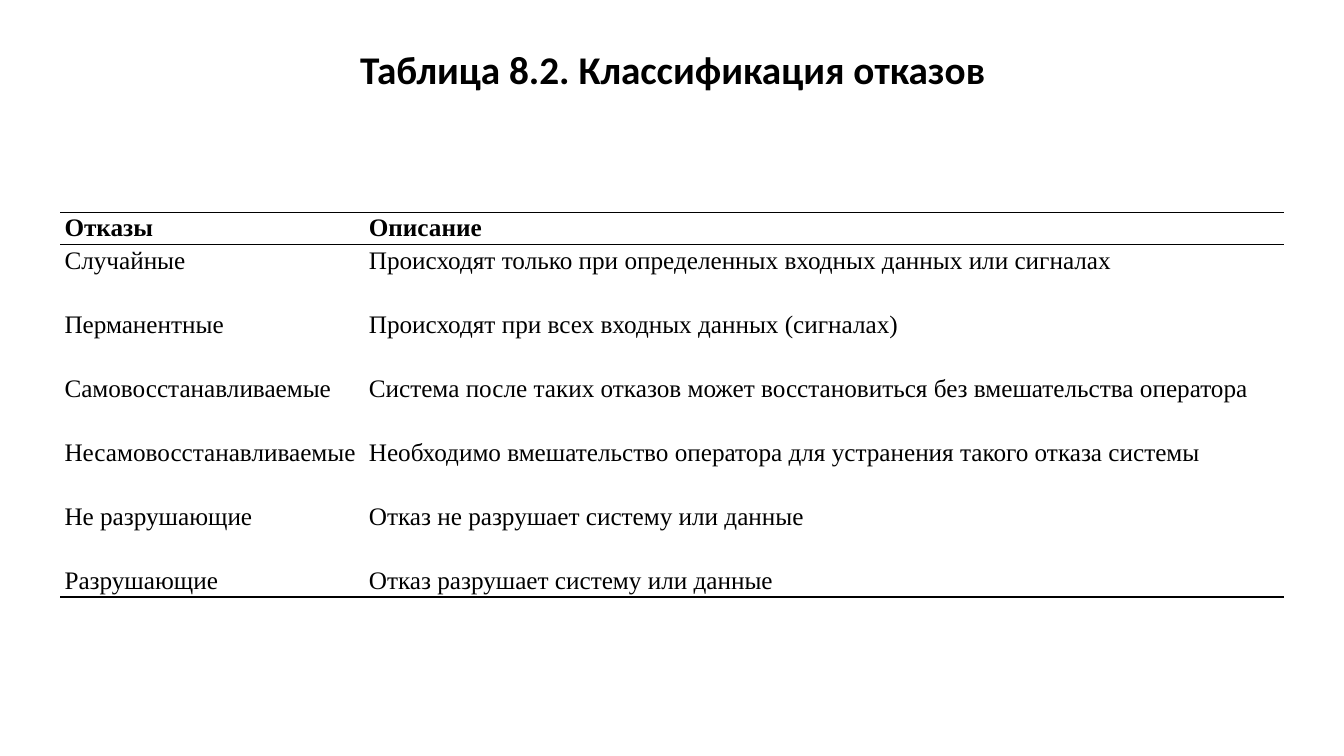
from lxml import etree
from pptx import Presentation
from pptx import util as u
from pptx.dml.color import RGBColor
from pptx.enum import text
from pptx.oxml import ns

PAGE_WIDTH, PAGE_HEIGHT = u.Inches(13.33), u.Inches(7.5)
BLACK, WHITE = "000000", "FFFFFF"
LINE_UNIT = u.Inches(3.81 / 12)
COLUMN_SHARES = (0.2265, 0.6842)
HEADINGS = ("Отказы", "Описание")
FAILURES = (
    ("Случайные", "Происходят только при определенных входных данных или сигналах"),
    ("Перманентные", "Происходят при всех входных данных (сигналах)"),
    ("Самовосстанавливаемые",
     "Система после таких отказов может восстановиться без вмешательства оператора"),
    ("Несамовосстанавливаемые",
     "Необходимо вмешательство оператора для устранения такого отказа системы"),
    ("Не разрушающие", "Отказ не разрушает систему или данные"),
    ("Разрушающие", "Отказ разрушает систему или данные"),
)


def color(value):
    return RGBColor.from_string(value)


def across(share):
    return round(PAGE_WIDTH * share)


def down(share):
    return round(PAGE_HEIGHT * share)


def write(frame, words, font, size, bold=False, align=None, spacing=1.0):
    para = frame.paragraphs[0]
    para.alignment = align
    para.line_spacing = spacing
    span = para.add_run()
    span.text = words
    span.font.name = font
    span.font.size = u.Pt(size)
    span.font.bold = bold
    span.font.color.rgb = color(BLACK)


def add_title(page, words):
    box = page.shapes.add_textbox(across(0.069), down(0.06), across(0.863), down(0.073))
    box.text_frame.word_wrap = True
    write(box.text_frame, words, "Calibri", 28, bold=True,
          align=text.PP_ALIGN.CENTER, spacing=0.9)


def set_borders(cell, ruled):
    properties = cell._tc.get_or_add_tcPr()
    for side in "LRTB":
        line = etree.SubElement(properties, ns.qn(f"a:ln{side}"), w=str(u.Pt(1)))
        if side in ruled:
            fill = etree.SubElement(line, ns.qn("a:solidFill"))
            etree.SubElement(fill, ns.qn("a:srgbClr"), val=BLACK)
        else:
            etree.SubElement(line, ns.qn("a:noFill"))


def fill_cell(cell, words, bold, ruled):
    cell.margin_left = cell.margin_right = u.Inches(0.04)
    cell.margin_top = cell.margin_bottom = 0
    set_borders(cell, ruled)
    cell.fill.solid()
    cell.fill.fore_color.rgb = color(WHITE)
    write(cell.text_frame, words, "Times New Roman", 18, bold=bold, spacing=1.07)


def add_failure_table(page):
    rows = (HEADINGS, *FAILURES)
    last = len(rows) - 1
    rules = {0: "TB", 1: "T", last: "B"}
    table = page.shapes.add_table(
        len(rows), len(HEADINGS), across(0.045), down(0.281),
        across(sum(COLUMN_SHARES)), 2 * last * LINE_UNIT).table
    table.first_row = table.horz_banding = False
    for column, share in zip(table.columns, COLUMN_SHARES):
        column.width = across(share)
    for index, entries in enumerate(rows):
        table.rows[index].height = LINE_UNIT * (1 if index in (0, last) else 2)
        for position, words in enumerate(entries):
            fill_cell(table.cell(index, position), words,
                      bold=index == 0, ruled=rules.get(index, ""))


def main():
    deck = Presentation()
    deck.slide_width, deck.slide_height = PAGE_WIDTH, PAGE_HEIGHT
    page = deck.slides.add_slide(deck.slide_layouts[6])
    add_title(page, "Таблица 8.2. Классификация отказов")
    add_failure_table(page)
    deck.save("out.pptx")


if __name__ == "__main__":
    main()
